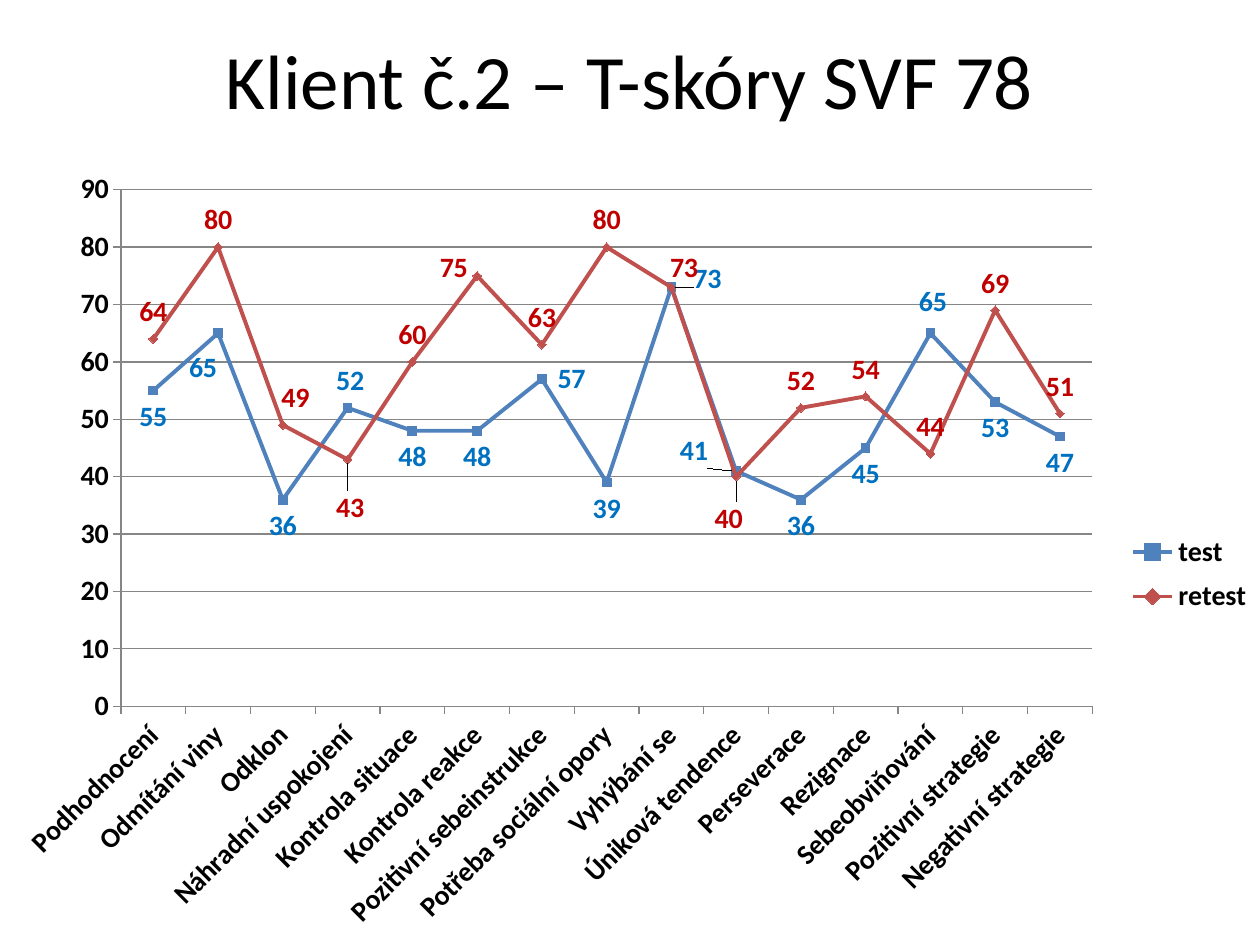
from lxml import etree
from pptx import Presentation
from pptx.chart.data import CategoryChartData
from pptx.dml.color import RGBColor
from pptx.enum.chart import (XL_CHART_TYPE, XL_LABEL_POSITION, XL_LEGEND_POSITION,
                             XL_MARKER_STYLE, XL_TICK_MARK)
from pptx.enum.text import MSO_ANCHOR, PP_ALIGN
from pptx.oxml.ns import qn
from pptx.util import Pt

ABOVE, BELOW = XL_LABEL_POSITION.ABOVE, XL_LABEL_POSITION.BELOW
LEFT, RIGHT = XL_LABEL_POSITION.LEFT, XL_LABEL_POSITION.RIGHT
FONT = "Calibri"
COLORS = {"text": "000000", "grid": "868686", "test": "4F81BD", "retest": "C0504D",
          "test_label": "0070C0", "retest_label": "C00000"}

TITLE = "Klient č.2 – T-skóry SVF 78"
SCALES = ["Podhodnocení", "Odmítání viny", "Odklon", "Náhradní uspokojení",
          "Kontrola situace", "Kontrola reakce", "Pozitivní sebeinstrukce",
          "Potřeba sociální opory", "Vyhýbání se", "Úniková tendence", "Perseverace",
          "Rezignace", "Sebeobviňování", "Pozitivní strategie", "Negativní strategie"]
SERIES = [
    {"name": "test", "marker": XL_MARKER_STYLE.SQUARE, "position": BELOW,
     "values": [55, 65, 36, 52, 48, 48, 57, 39, 73, 41, 36, 45, 65, 53, 47],
     "moved": {1: (BELOW, -1.2, 1.1), 3: (ABOVE, 0.2, 0), 6: (RIGHT, 0.5, 0),
               8: (RIGHT, 1, -1), 9: (LEFT, -1.5, -2.5), 12: (ABOVE, 0.2, -0.6)}},
    {"name": "retest", "marker": XL_MARKER_STYLE.DIAMOND, "position": ABOVE,
     "values": [64, 80, 49, 43, 60, 75, 63, 80, 73, 40, 52, 54, 44, 69, 51],
     "moved": {2: (ABOVE, 1, 0), 3: (BELOW, 0.2, 2.8), 5: (LEFT, 0, -1),
               8: (ABOVE, 1, 0.9), 9: (BELOW, -0.6, 2)}},
]
PLOT_PERCENT = {"x": 9.6, "y": 4.1, "w": 77.1, "h": 65.6}
LEGEND_PERCENT = {"x": 89, "y": 46.7, "w": 10.8, "h": 12.5}


def rgb(key):
    return RGBColor.from_string(COLORS[key])


def set_font(font, size, color="text", bold=False):
    font.name = FONT
    font.size = Pt(size)
    font.bold = bold
    font.color.rgb = rgb(color)


def set_line(line, color, width):
    line.color.rgb = rgb(color)
    line.width = Pt(width)


def set_layout(parent, index, percents, **modes):
    for old in parent.findall(qn("c:layout")):
        parent.remove(old)
    layout = etree.Element(qn("c:layout"))
    manual = etree.SubElement(layout, qn("c:manualLayout"))
    settings = modes | {key: str(value / 100) for key, value in percents.items()}
    for tag, value in settings.items():
        etree.SubElement(manual, qn(f"c:{tag}")).set("val", value)
    parent.insert(index, layout)


def format_series(series, spec):
    name = spec["name"]
    series.smooth = False
    set_line(series.format.line, name, 2.25)
    series.marker.style = spec["marker"]
    series.marker.size = 5
    series.marker.format.fill.solid()
    series.marker.format.fill.fore_color.rgb = rgb(name)
    set_line(series.marker.format.line, name, 0.75)
    labels = series.data_labels
    labels.show_value = True
    labels.position = spec["position"]
    set_font(labels.font, 16, f"{name}_label", True)
    for index, (position, dx, dy) in spec["moved"].items():
        label = series.points[index].data_label
        set_font(label.font, 16, f"{name}_label", True)
        label.position = position
        element = next(e for e in labels._element.findall(qn("c:dLbl"))
                       if e.find(qn("c:idx")).get("val") == str(index))
        set_layout(element, 1, {"x": dx, "y": dy})


def format_axes(chart):
    for axis in (chart.category_axis, chart.value_axis):
        axis.major_tick_mark = XL_TICK_MARK.OUTSIDE
        axis.minor_tick_mark = XL_TICK_MARK.NONE
        set_font(axis.tick_labels.font, 16, bold=True)
        set_line(axis.format.line, "grid", 0.75)
    chart.category_axis._element.find(qn("c:txPr")).find(qn("a:bodyPr")).set("rot", "-2700000")
    value_axis = chart.value_axis
    value_axis.minimum_scale, value_axis.maximum_scale, value_axis.major_unit = 0, 90, 10
    value_axis.has_major_gridlines = True
    set_line(value_axis.major_gridlines.format.line, "grid", 0.75)


def add_scores_chart(s):
    data = CategoryChartData()
    data.categories = SCALES
    for spec in SERIES:
        data.add_series(spec["name"], spec["values"])
    chart = s.shapes.add_chart(XL_CHART_TYPE.LINE_MARKERS, Pt(0), Pt(90),
                               Pt(720), Pt(450), data).chart
    set_font(chart.font, 10)
    chart.has_title = False
    chart.plots[0].vary_by_categories = False
    for series, spec in zip(chart.plots[0].series, SERIES):
        format_series(series, spec)
    format_axes(chart)
    chart.has_legend = True
    legend = chart.legend
    legend.position = XL_LEGEND_POSITION.RIGHT
    legend.include_in_layout = False
    set_font(legend.font, 16, bold=True)
    set_layout(legend._element, 1, LEGEND_PERCENT, xMode="edge", yMode="edge")
    plot_area = chart._chartSpace.find(".//" + qn("c:plotArea"))
    set_layout(plot_area, 0, PLOT_PERCENT, layoutTarget="inner", xMode="edge", yMode="edge")


def main():
    prs = Presentation()
    prs.slide_width, prs.slide_height = Pt(720), Pt(540)
    s = prs.slides.add_slide(prs.slide_layouts[5])
    title = s.shapes.title
    title.left, title.top, title.width, title.height = Pt(36), Pt(0), Pt(648), Pt(90)
    tf = title.text_frame
    tf.vertical_anchor = MSO_ANCHOR.MIDDLE
    p = tf.paragraphs[0]
    p.alignment = PP_ALIGN.CENTER
    r = p.add_run()
    r.text = TITLE
    set_font(r.font, 44)
    add_scores_chart(s)
    prs.save("out.pptx")


if __name__ == "__main__":
    main()
